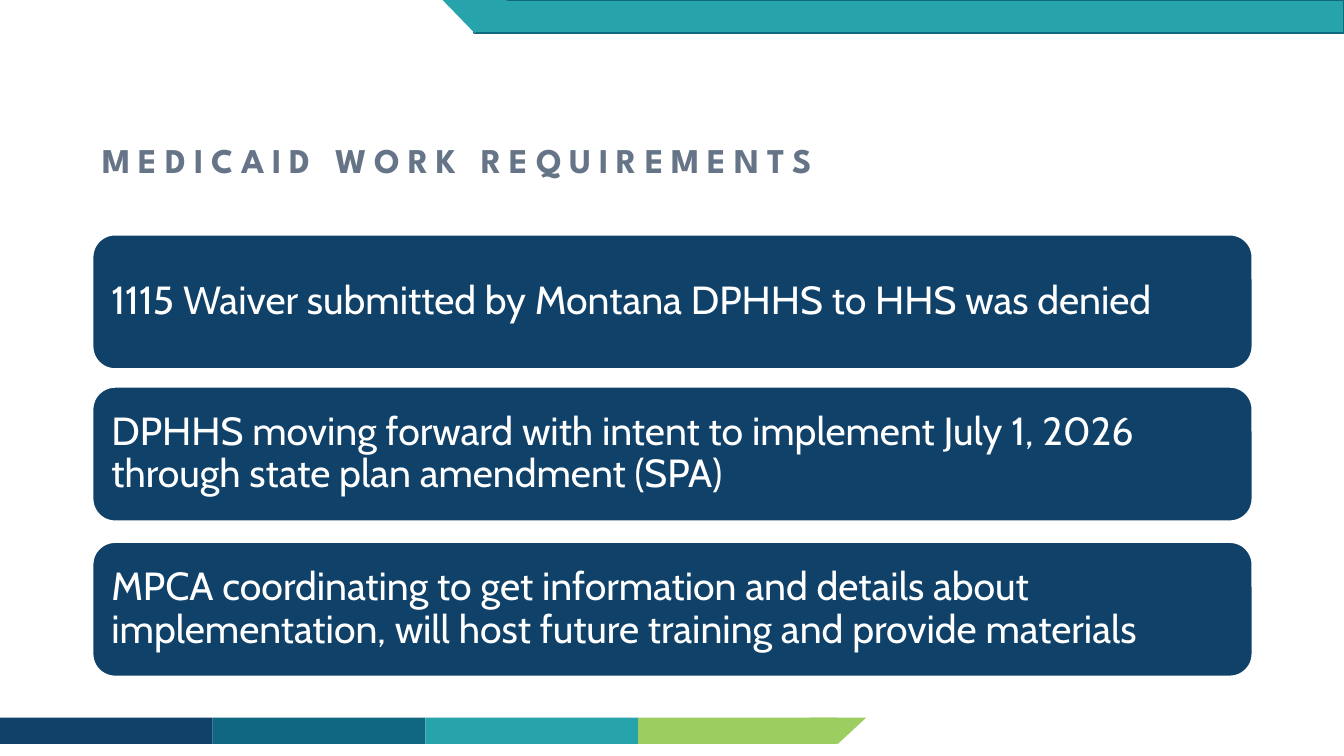
from pptx import Presentation
from pptx.dml.color import RGBColor
from pptx.enum.shapes import MSO_SHAPE
from pptx.enum.text import MSO_ANCHOR, PP_ALIGN
from pptx.util import Inches, Pt

NAVY, PETROL, TEAL, GREEN = "104169", "0F687F", "26A3AB", "9CCD60"
WHITE, SLATE = "FFFFFF", "667487"


def color(value):
    return RGBColor.from_string(value)


def write(tf, text, *, font, size, fill, bold=False, spacing=0, inset=(0.1, 0.05)):
    """Fill a text frame with one left-aligned, vertically centred paragraph."""
    tf.word_wrap = True
    tf.vertical_anchor = MSO_ANCHOR.MIDDLE
    tf.margin_left = tf.margin_right = Inches(inset[0])
    tf.margin_top = tf.margin_bottom = Inches(inset[1])
    p = tf.paragraphs[0]
    p.alignment = PP_ALIGN.LEFT
    p.line_spacing = 0.9
    r = p.add_run()
    r.text = text
    r.font.name = font
    r.font.size = Pt(size)
    r.font.bold = bold
    r.font.color.rgb = color(fill)
    if spacing:
        r.font._element.set("spc", str(round(spacing * 100)))


class Deck:
    heading_font = "League Spartan"
    body_font = "Cabin"

    def __init__(self):
        self.prs = Presentation()
        self.prs.slide_width = Inches(13.33)
        self.prs.slide_height = Inches(7.5)
        self.s = self.prs.slides.add_slide(self.prs.slide_layouts[6])

    def shape(self, kind, x, y, w, h, fill, line=None):
        sp = self.s.shapes.add_shape(kind, Inches(x), Inches(y), Inches(w), Inches(h))
        sp.shadow.inherit = False
        sp.fill.solid()
        sp.fill.fore_color.rgb = color(fill)
        if line:
            sp.line.color.rgb = color(line)
            sp.line.width = Pt(1)
        else:
            sp.line.fill.background()
        return sp

    def bar(self, x, y, w, h, fill, line=None):
        return self.shape(MSO_SHAPE.RECTANGLE, x, y, w, h, fill, line)

    def slanted_end(self, x, y, w, h, fill):
        """Downward triangle that gives a bar its slanted end."""
        self.shape(MSO_SHAPE.ISOSCELES_TRIANGLE, x, y, w, h, fill).rotation = 180

    def title(self, text):
        box = self.s.shapes.add_textbox(Inches(0.92), Inches(0.88), Inches(11.5), Inches(1.45))
        write(box.text_frame, text, font=self.heading_font, size=24.8,
              fill=SLATE, bold=True, spacing=5.6)

    def card(self, y, text):
        sp = self.shape(MSO_SHAPE.ROUNDED_RECTANGLE, 0.92, y, 11.5, 1.33, NAVY, WHITE)
        write(sp.text_frame, text, font=self.body_font, size=28,
              fill=WHITE, inset=(0.12, 0.12))


def main():
    deck = Deck()

    footer_y, footer_h, step = 7.12, 0.26, 2.11
    for i, (fill, width) in enumerate([(NAVY, step), (PETROL, step), (TEAL, step), (GREEN, 1.97)]):
        deck.bar(i * step, footer_y, width, footer_h, fill)
    deck.slanted_end(8.03, footer_y, 0.56, footer_h, GREEN)

    deck.bar(4.7, 0, 8.63, 0.33, TEAL, PETROL)
    deck.slanted_end(4.39, 0, 0.64, 0.33, TEAL)

    deck.title("MEDICAID WORK REQUIREMENTS")
    for y, text in [
        (2.33, "1115 Waiver submitted by Montana DPHHS to HHS was denied"),
        (3.84, "DPHHS moving forward with intent to implement July 1, 2026 "
               "through state plan amendment (SPA)"),
        (5.38, "MPCA coordinating to get information and details about "
               "implementation, will host future training and provide materials"),
    ]:
        deck.card(y, text)

    deck.prs.save("out.pptx")


if __name__ == "__main__":
    main()
